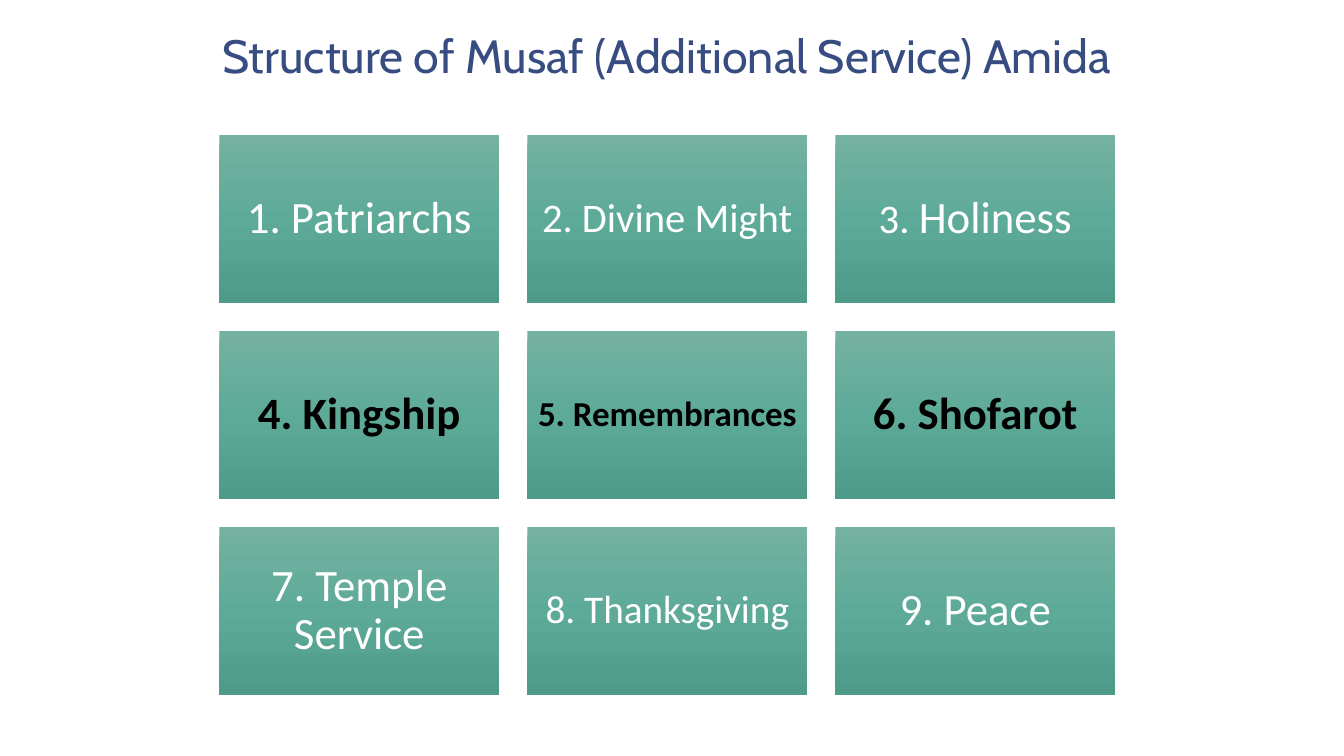
from copy import deepcopy

from pptx import Presentation
from pptx.dml.color import RGBColor
from pptx.enum.shapes import MSO_SHAPE
from pptx.enum.text import MSO_ANCHOR, PP_ALIGN
from pptx.oxml.ns import qn
from pptx.util import Pt

RECTANGLE = MSO_SHAPE.RECTANGLE
TOP, MIDDLE = MSO_ANCHOR.TOP, MSO_ANCHOR.MIDDLE
CENTER = PP_ALIGN.CENTER

WHITE, BLACK, NAVY = "FFFFFF", "000000", "374C81"
GREEN_STOPS = [(0, "75B1A1"), (0.5, "5EAA98"), (1, "4F9B89")]
COLUMNS = 3
GAP = 20

# Each blessing is a list of (text, size) runs and whether it is emphasised.
BLESSINGS = [
    ([("1. Patriarchs", 32)], False),
    ([("2. Divine Might", 29)], False),
    ([("3. ", 29), ("Holiness", 32)], False),
    ([("4. Kingship", 32)], True),
    ([("5. Remembrances", 25)], True),
    ([("6. Shofarot", 32)], True),
    ([("7. Temple Service", 32)], False),
    ([("8. Thanksgiving", 28)], False),
    ([("9. Peace", 32)], False),
]


def color(hex_value):
    return RGBColor.from_string(hex_value)


def apply(target, values):
    for name, value in values.items():
        setattr(target, name, value)


def write(frame, runs, font, hex_color, anchor, side, edge, spacing, bold=False):
    """Fill a text frame with one centred paragraph; side and edge are insets."""
    apply(frame, {
        "word_wrap": True, "vertical_anchor": anchor,
        "margin_left": Pt(side), "margin_right": Pt(side),
        "margin_top": Pt(edge), "margin_bottom": Pt(edge),
    })
    paragraph = frame.paragraphs[0]
    apply(paragraph, {"alignment": CENTER, "line_spacing": spacing})
    for text, size in runs:
        run = paragraph.add_run()
        run.text = text
        apply(run.font, {"name": font, "size": Pt(size), "bold": bold})
        run.font.color.rgb = color(hex_color)


def fill_downward(shape, stops):
    """Give a shape a top-to-bottom gradient with any number of stops."""
    shape.fill.gradient()
    shape.fill.gradient_angle = 270
    stop_list = shape._element.spPr.find(qn("a:gradFill")).find(qn("a:gsLst"))
    while len(stop_list) < len(stops):
        stop_list.append(deepcopy(stop_list[0]))
    for stop, (position, hex_value) in zip(shape.fill.gradient_stops, stops):
        stop.position = position
        stop.color.rgb = color(hex_value)


def add_title(slide, left, top, width, height):
    box = slide.shapes.add_textbox(Pt(left), Pt(top), Pt(width), Pt(height))
    write(box.text_frame, [("Structure of Musaf (Additional Service) Amida", 33.3)],
          "Cabin", NAVY, TOP, 9.6, 4.8, 0.95)


def add_blessing(slide, left, top, width, height, runs, emphasised):
    tile = slide.shapes.add_shape(RECTANGLE, Pt(left), Pt(top), Pt(width), Pt(height))
    tile.shadow.inherit = False
    tile.line.fill.background()
    fill_downward(tile, GREEN_STOPS)
    inset = 0.3 * runs[0][1]
    write(tile.text_frame, runs, "Calibri", BLACK if emphasised else WHITE,
          MIDDLE, inset, inset, 0.9, emphasised)


def add_blessing_grid(slide, left, top, width, height):
    rows = len(BLESSINGS) // COLUMNS
    tile_width = (width - GAP * (COLUMNS - 1)) / COLUMNS
    tile_height = (height - GAP * (rows - 1)) / rows
    for index, (runs, emphasised) in enumerate(BLESSINGS):
        row, column = divmod(index, COLUMNS)
        add_blessing(slide, left + column * (tile_width + GAP),
                     top + row * (tile_height + GAP),
                     tile_width, tile_height, runs, emphasised)


def main():
    presentation = Presentation()
    apply(presentation, {"slide_width": Pt(960), "slide_height": Pt(540)})
    slide = presentation.slides.add_slide(presentation.slide_layouts[6])
    slide.background.fill.solid()
    slide.background.fill.fore_color.rgb = color(WHITE)
    add_title(slide, 119.5, 17.3, 714, 67.7)
    add_blessing_grid(slide, 156.7, 96.4, 640, 400)
    presentation.save("out.pptx")


if __name__ == "__main__":
    main()
